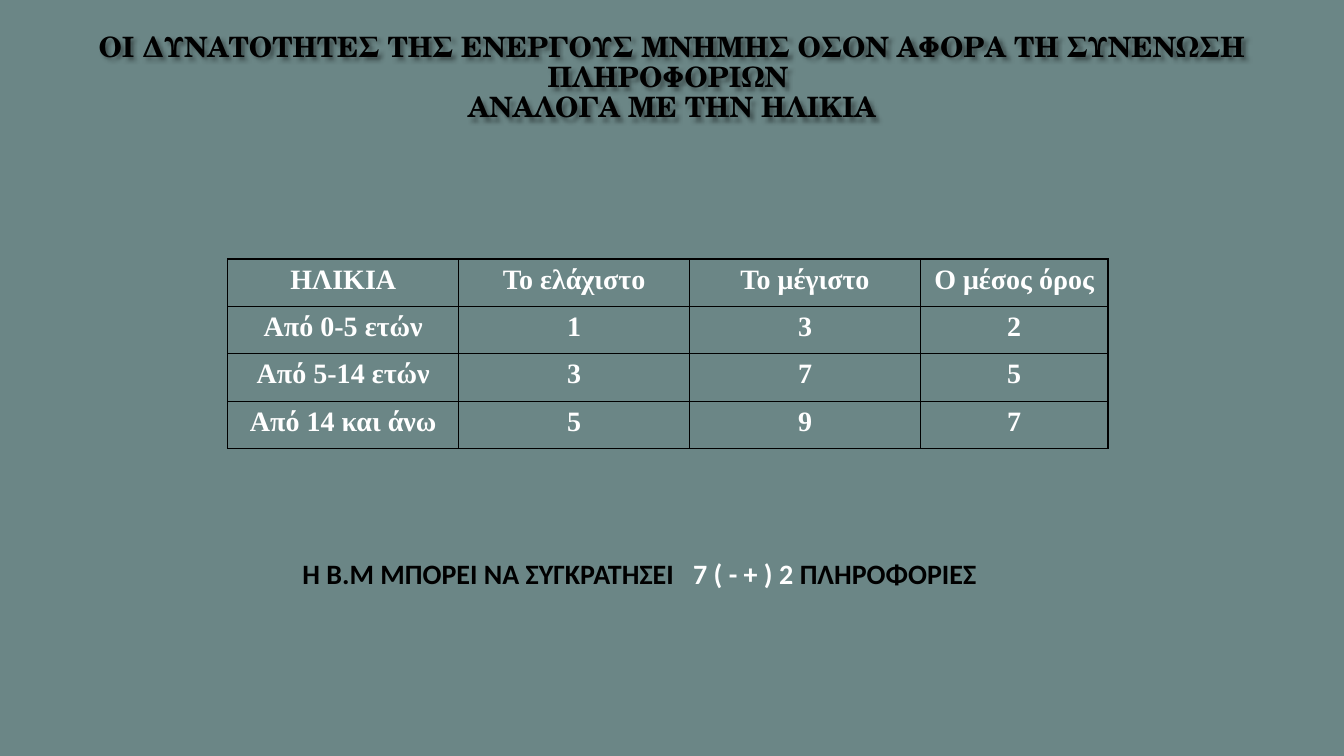
from dataclasses import dataclass

from lxml import etree
from pptx import Presentation, util as u
from pptx.dml.color import RGBColor
from pptx.enum import text
from pptx.oxml import ns

TITLE = ("ΟΙ ΔΥΝΑΤΟΤΗΤΕΣ ΤΗΣ ΕΝΕΡΓΟΥΣ ΜΝΗΜΗΣ ΟΣΟΝ ΑΦΟΡΑ ΤΗ ΣΥΝΕΝΩΣΗ ΠΛΗΡΟΦΟΡΙΩΝ "
         "\vΑΝΑΛΟΓΑ ΜΕ ΤΗΝ ΗΛΙΚΙΑ")
ROWS = [
    ("ΗΛΙΚΙΑ", "Το ελάχιστο", "Το μέγιστο", "Ο μέσος όρος"),
    ("Από 0-5 ετών", "1", "3", "2"),
    ("Από 5-14 ετών", "3", "7", "5"),
    ("Από 14 και άνω", "5", "9", "7"),
]
NOTE = [  # words, colour, extra letter spacing in points
    ("Η Β.Μ ΜΠΟΡΕΙ ΝΑ ΣΥΓΚΡΑΤΗΣΕΙ", "dark", 0),
    (" ", "dark", 9),
    ("7 ( - + ) 2 ", "light", 0),
    ("ΠΛΗΡΟΦΟΡΙΕΣ", "dark", 0),
]
COLS = (2.29, 2.29, 2.29, 1.86)
ROW = 0.47
WIDE, HIGH = 13.33, 7.5


@dataclass(frozen=True)
class Theme:
    back: str = "6B8686"
    dark: str = "000000"
    light: str = "FFFFFF"
    edge: str = "404040"
    size: int = 20
    head: str = "TeX Gyre Schola"
    grid: str = "Times New Roman"
    body: str = "Calibri"


LOOK = Theme()


def style(run, face, color):
    font = run.font
    font.name, font.size, font.bold = face, u.Pt(LOOK.size), True
    font.color.rgb = RGBColor.from_string(color)


def add(parent, tag, **attrs):
    """Append one DrawingML element and return it."""
    return etree.SubElement(parent, ns.qn(tag), attrs)


def paint(parent, color, alpha=100):
    fill = add(add(parent, "a:solidFill"), "a:srgbClr", val=color)
    if alpha < 100:
        add(fill, "a:alpha", val=str(alpha * 1000))


def add_box(slide, left, top, width, height, wrap):
    box = slide.shapes.add_textbox(*map(u.Inches, (left, top, width, height)))
    box.text_frame.word_wrap = wrap
    box.text_frame.vertical_anchor = text.MSO_ANCHOR.TOP
    return box


def add_title(slide):
    box = add_box(slide, WIDE * 0.05, HIGH * 0.04, WIDE * 0.9, 1.25, True)
    frame = box.text_frame
    frame.margin_top = u.Inches(0.03)
    frame.text = TITLE
    para = frame.paragraphs[0]
    para.alignment, para.line_spacing = text.PP_ALIGN.CENTER, 0.9
    for run in para.runs:
        style(run, LOOK.head, LOOK.dark)
        props = run._r.get_or_add_rPr()
        line = add(props, "a:ln", w=str(u.Pt(0.75)))
        paint(line, LOOK.edge, 10)
        props.insert(0, line)
    shade = add(add(box._element.spPr, "a:effectLst"), "a:outerShdw",
                blurRad=str(u.Pt(3)), dist=str(u.Pt(3)), dir="2700000")
    add(add(shade, "a:srgbClr", val=LOOK.dark), "a:alpha", val="40000")


def add_grid(slide):
    frame = slide.shapes.add_table(
        len(ROWS), len(COLS), u.Inches(2.26), u.Inches(2.57),
        u.Inches(sum(COLS)), u.Inches(ROW * len(ROWS)))
    table = frame.table
    table.first_row = table.horz_banding = False
    for col, width in zip(table.columns, COLS):
        col.width = u.Inches(width)
    for row, words in zip(table.rows, ROWS):
        row.height = u.Inches(ROW)
        for cell, word in zip(row.cells, words):
            cell.text_frame.text = word
            para = cell.text_frame.paragraphs[0]
            para.alignment = text.PP_ALIGN.CENTER
            style(para.runs[0], LOOK.grid, LOOK.light)
            props = cell._tc.get_or_add_tcPr()
            for side in "LRTB":
                paint(add(props, f"a:ln{side}", w=str(u.Pt(1))), LOOK.dark)
            cell.fill.background()


def add_note(slide):
    box = add_box(slide, 2.9, 5.47, 7.45, 0.71, False)
    para = box.text_frame.paragraphs[0]
    for words, color, space in NOTE:
        run = para.add_run()
        run.text = words
        style(run, LOOK.body, getattr(LOOK, color))
        if space:
            run._r.get_or_add_rPr().set("spc", str(space * 100))


def main():
    deck = Presentation()
    deck.slide_width, deck.slide_height = u.Inches(WIDE), u.Inches(HIGH)
    slide = deck.slides.add_slide(deck.slide_layouts[6])
    fill = slide.background.fill
    fill.solid()
    fill.fore_color.rgb = RGBColor.from_string(LOOK.back)
    add_title(slide)
    add_grid(slide)
    add_note(slide)
    deck.save("out.pptx")


if __name__ == "__main__":
    main()
